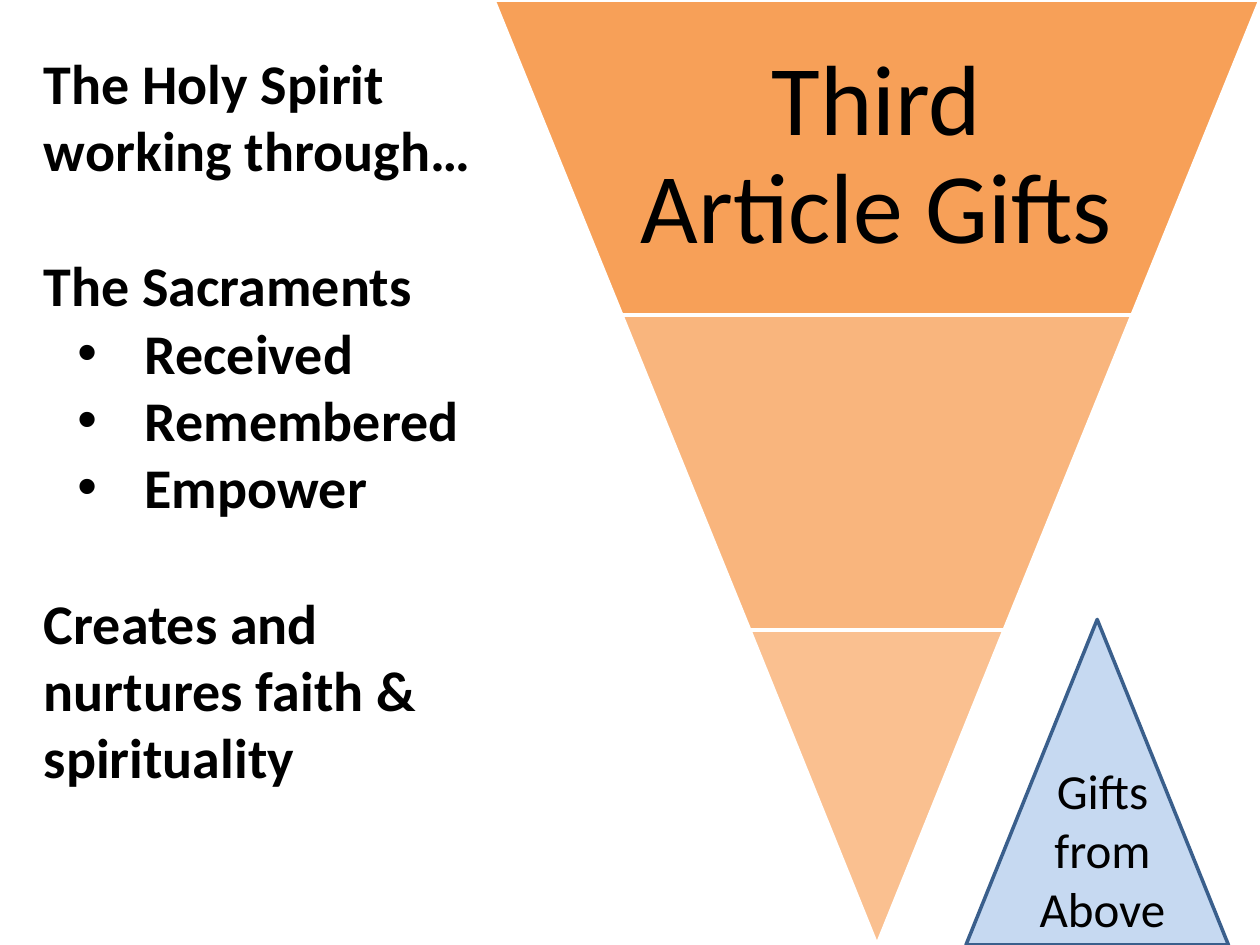
from lxml import etree
from pptx import Presentation
from pptx.dml.color import RGBColor
from pptx.enum import shapes, text
from pptx.oxml import ns
from pptx.util import Pt

ORANGE = RGBColor(0xF7, 0x96, 0x46)
PEACH = RGBColor(0xFA, 0xC0, 0x90)
PALE_BLUE = RGBColor(0xC6, 0xD9, 0xF1)
NAVY = RGBColor(0x3A, 0x5F, 0x8C)
WHITE = RGBColor(0xFF, 0xFF, 0xFF)
BLACK = RGBColor(0, 0, 0)
FONT = "Calibri"
BAND_H = 180
STEP = 73.1
TOP_LEFT, TOP_WIDTH = 282.2, 437.8


def add_shape(s, kind, box, fill, line, adj=0.5, rotation=0, alpha=None):
    """Add a filled, outlined preset shape."""
    sp = s.shapes.add_shape(kind, *map(Pt, box))
    sp.shadow.inherit = False
    sp.adjustments[0] = adj
    sp.rotation = rotation
    sp.fill.solid()
    sp.fill.fore_color.rgb = fill
    sp.line.color.rgb = line
    sp.line.width = Pt(2)
    if alpha:
        clr = sp._element.spPr.find(ns.qn("a:solidFill"))[0]
        etree.SubElement(clr, ns.qn("a:alpha"), val=str(alpha * 1000))


def add_text_box(s, box):
    """Add a wrapping text box and return its text frame."""
    tf = s.shapes.add_textbox(*map(Pt, box)).text_frame
    tf.word_wrap = True
    return tf


def add_run(p, words, size, bold=False):
    """Add a black run to a paragraph."""
    r = p.add_run()
    r.text = words
    r.font.name = FONT
    r.font.size = Pt(size)
    r.font.bold = bold
    r.font.color.rgb = BLACK


def add_bullet(p):
    """Give a paragraph a hanging round bullet."""
    pPr = p._p.get_or_add_pPr()
    pPr.set("marL", str(Pt(57.6)))
    pPr.set("indent", str(Pt(-38.4)))
    etree.SubElement(pPr, ns.qn("a:buFont"), typeface="Arial")
    etree.SubElement(pPr, ns.qn("a:buChar"), char="•")


def add_label(s, box, words, size):
    """Add a centred label and return its text frame."""
    tf = add_text_box(s, box)
    p = tf.paragraphs[0]
    p.alignment = text.PP_ALIGN.CENTER
    add_run(p, words, size)
    return tf


def add_funnel(s):
    """Draw the inverted pyramid with its title."""
    for i, (fill, alpha) in enumerate([(ORANGE, 90), (ORANGE, 70), (PEACH, None)]):
        width = TOP_WIDTH - 2 * STEP * i
        box = (TOP_LEFT + STEP * i, BAND_H * i, width, BAND_H)
        adj = min(0.5, STEP / min(width, BAND_H))
        add_shape(s, shapes.MSO_SHAPE.TRAPEZOID, box, fill, WHITE, adj, 180, alpha)
    tf = add_label(s, (358.6, 0, 284.4, BAND_H), "Third Article Gifts", 57)
    tf.vertical_anchor = text.MSO_ANCHOR.MIDDLE
    tf.margin_left = tf.margin_right = tf.margin_top = tf.margin_bottom = Pt(5.76)
    tf.paragraphs[0].line_spacing = 0.9


def add_outline(s):
    """Write the bold outline on the left."""
    tf = add_text_box(s, (18, 24, 276, 433.4))
    items = [
        ("The Holy Spirit working through…", False),
        ("The Sacraments", False),
        ("Received", True),
        ("Remembered", True),
        ("Empower", True),
        ("Creates and nurtures faith & spirituality", False),
    ]
    for i, (words, bulleted) in enumerate(items):
        p = tf.add_paragraph() if i else tf.paragraphs[0]
        if bulleted:
            add_bullet(p)
        elif i:
            p.space_before = Pt(39)
        add_run(p, words, 32, True)


def main():
    """Build and save the slide."""
    prs = Presentation()
    prs.slide_width, prs.slide_height = Pt(720), Pt(540)
    s = prs.slides.add_slide(prs.slide_layouts[6])
    add_funnel(s)
    add_shape(s, shapes.MSO_SHAPE.ISOSCELES_TRIANGLE, (552, 354, 150, 186), PALE_BLUE, NAVY)
    add_label(s, (570, 431, 120, 109), "Gifts from Above", 28)
    add_outline(s)
    prs.save("out.pptx")


if __name__ == "__main__":
    main()
